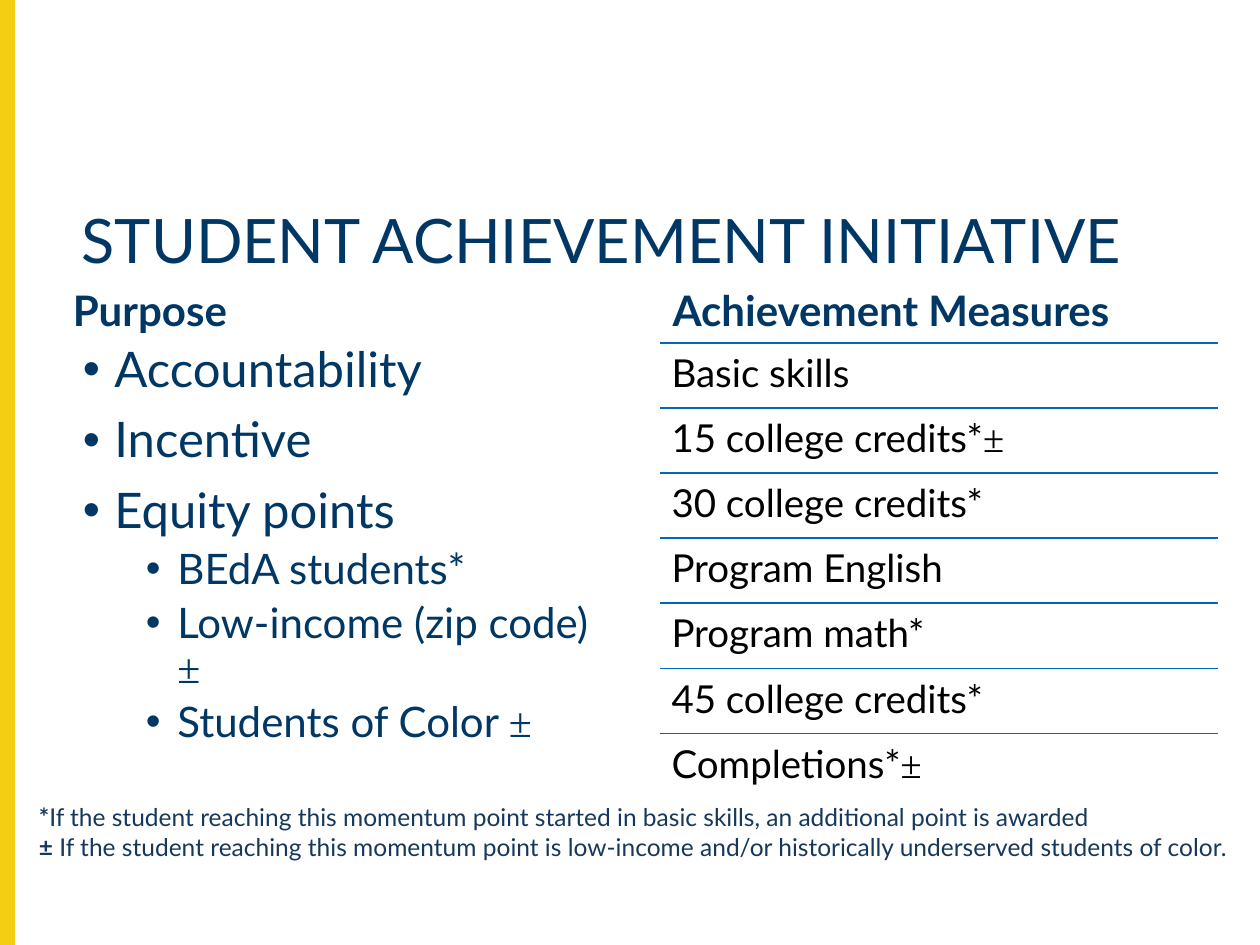
from dataclasses import dataclass
from itertools import groupby
from typing import Any

from lxml.etree import SubElement
from pptx import Presentation
from pptx.dml.color import RGBColor
from pptx.enum.shapes import MSO_CONNECTOR, MSO_SHAPE
from pptx.enum.text import MSO_ANCHOR
from pptx.oxml.ns import qn
from pptx.util import Inches, Pt


def color(value):
    """Turn a hex string into a colour."""
    return RGBColor.from_string(value)


def grid(*cells):
    """Turn grid cells, 100 columns by 75 rows to the slide, into lengths."""
    return [Inches(cell / 10) for cell in cells]


@dataclass
class Sheet:
    """Hold the style and the current slide."""
    page: Any
    font: str = "Lato"
    symbol_font: str = "Times New Roman"
    navy: str = "003764"
    note_color: str = "15385C"
    rule_color: str = "0067BB"
    yellow: str = "F4CE12"

    def bar(self, *place):
        """Draw a plain filled bar."""
        bar = self.page.shapes.add_shape(MSO_SHAPE.RECTANGLE, *grid(*place))
        bar.shadow.inherit = False
        bar.fill.solid()
        bar.fill.fore_color.rgb = color(self.yellow)
        bar.line.color.rgb = color(self.yellow)
        bar.line.width = Pt(1)

    def rule(self, shapes, left, top, width):
        """Draw a level rule."""
        ends = grid(left, top, left + width, top)
        rule = shapes.add_connector(MSO_CONNECTOR.STRAIGHT, *ends)
        rule.line.color.rgb = color(self.rule_color)
        rule.line.width = Pt(1)
        SubElement(rule._element.spPr, qn("a:effectLst"))

    def frame(self, shapes, place, anchor=MSO_ANCHOR.TOP):
        """Add a wrapping text box and return its text frame."""
        frame = shapes.add_textbox(*grid(*place)).text_frame
        frame.word_wrap = True
        frame.vertical_anchor = anchor
        return frame

    def style(self, para, size, tint, bold=False, spacing=0.9):
        """Set the font and line spacing of a paragraph."""
        para.line_spacing = spacing
        para.font.name = self.font
        para.font.size = Pt(size)
        para.font.bold = bold
        para.font.color.rgb = color(tint)

    def add_spans(self, para, text):
        """Add text with its plus-minus signs in the symbol font."""
        for is_symbol, letters in groupby(text, lambda letter: letter == "±"):
            span = para.add_run()
            span.text = "".join(letters)
            if is_symbol:
                span.font.name = self.symbol_font

    def heading(self, text, place, size, bold=False, anchor=MSO_ANCHOR.TOP):
        """Add a one-line heading."""
        para = self.frame(self.page.shapes, place, anchor).paragraphs[0]
        self.style(para, size, self.navy, bold)
        self.add_spans(para, text)

    def bullets(self, items, place):
        """Add a bulleted list of (level, text) items."""
        frame = self.frame(self.page.shapes, place)
        for index, (level, text) in enumerate(items):
            para = frame.add_paragraph() if index else frame.paragraphs[0]
            para.level = level
            if index:
                para.space_before = Pt(5 if level else 10)
            props = para._p.get_or_add_pPr()
            props.set("marL", str(Inches(0.25 + 0.5 * level)))
            props.set("indent", str(Inches(-0.25)))
            SubElement(props, qn("a:buFont"), typeface="Arial")
            SubElement(props, qn("a:buChar"), char="•")
            self.style(para, 24 if level else 28, self.navy)
            self.add_spans(para, text)

    def ruled_list(self, items, left, top, width, pitch):
        """Add a group of rows, each under a rule."""
        shapes = self.page.shapes.add_group_shape().shapes
        for index, text in enumerate(items):
            row = top + index * pitch
            self.rule(shapes, left, row, width)
            frame = self.frame(shapes, (left, row, width, pitch))
            frame.margin_left = frame.margin_right = Inches(0.09)
            frame.margin_top = frame.margin_bottom = Inches(0.09)
            para = frame.paragraphs[0]
            self.style(para, 22, "000000")
            self.add_spans(para, text)

    def footnotes(self, notes, place):
        """Add notes that each open with a bold mark."""
        frame = self.frame(self.page.shapes, place)
        for index, (mark, text) in enumerate(notes):
            para = frame.add_paragraph() if index else frame.paragraphs[0]
            self.style(para, 14, self.note_color, spacing=1.0)
            span = para.add_run()
            span.text = mark
            span.font.bold = True
            para.add_run().text = text


def main():
    """Build the slide and save it."""
    deck = Presentation()
    deck.slide_width, deck.slide_height = grid(100, 75)
    sheet = Sheet(deck.slides.add_slide(deck.slide_layouts[6]))

    sheet.bar(0, 0, 1.1, 75)
    sheet.heading("STUDENT ACHIEVEMENT INITIATIVE", (5.5, 16.2, 91.2, 8.1), 35)
    for text, left in (("Purpose", 4.8), ("Achievement Measures", 52.4)):
        sheet.heading(text, (left, 21.4, 44, 5.7), 24, True, MSO_ANCHOR.BOTTOM)
    sheet.bullets([
        (0, "Accountability"),
        (0, "Incentive"),
        (0, "Equity points"),
        (1, "BEdA students*"),
        (1, "Low-income (zip code) ±"),
        (1, "Students of Color ±"),
    ], (5.6, 26.9, 43.8, 36.2))
    sheet.ruled_list([
        "Basic skills",
        "15 college credits*±",
        "30 college credits*",
        "Program English",
        "Program math*",
        "45 college credits*",
        "Completions*±",
    ], 52.4, 27.2, 44.3, 5.17)
    sheet.footnotes([
        ("*", "If the student reaching this momentum point started in basic "
              "skills, an additional point is awarded"),
        ("±", " If the student reaching this momentum point is low-income "
              "and/or historically underserved students of color."),
    ], (2.1, 63.2, 98, 5.7))
    deck.save("out.pptx")


if __name__ == "__main__":
    main()
